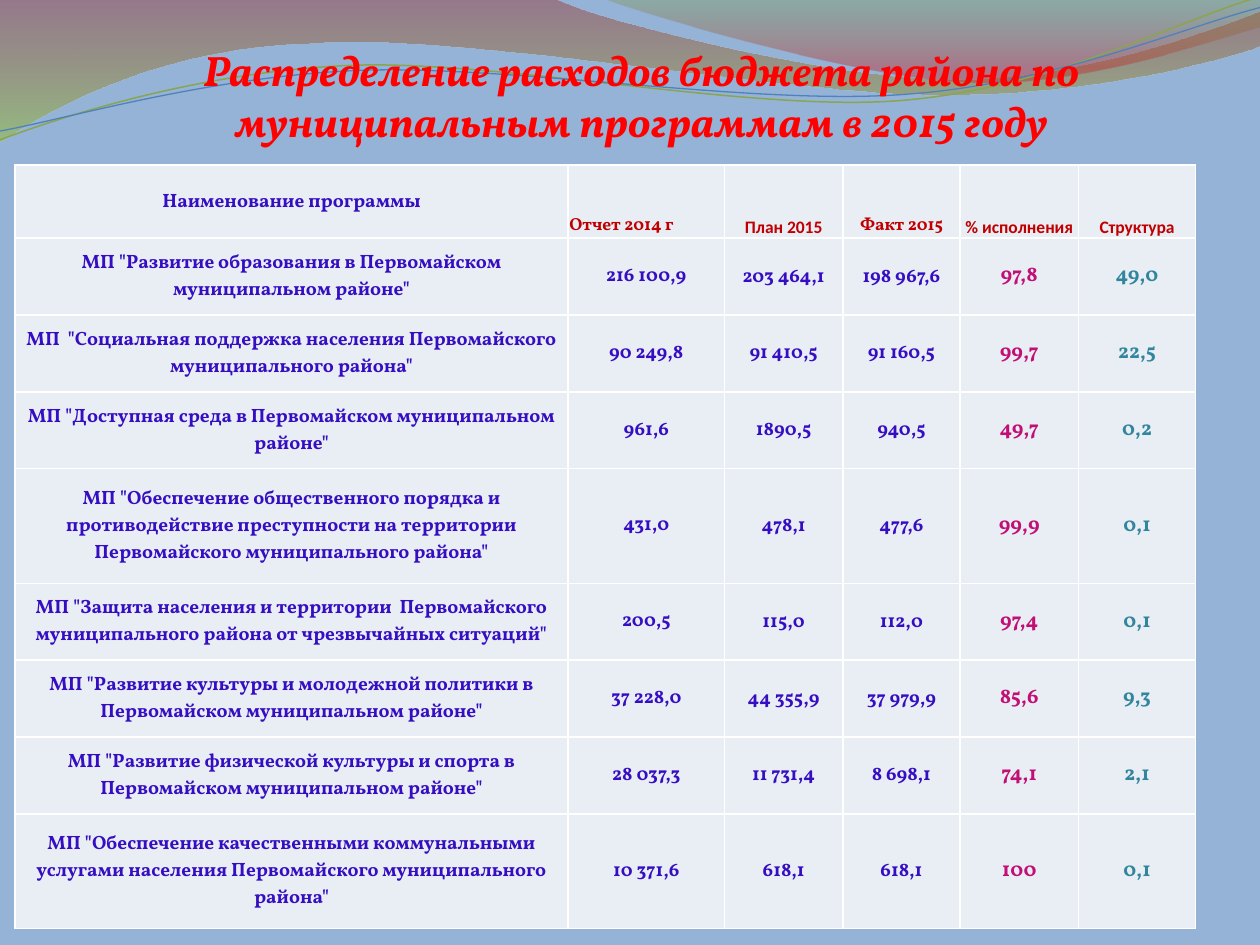
from lxml import etree
from pptx import Presentation
from pptx import util as u
from pptx.dml.color import RGBColor
from pptx.enum import text
from pptx.oxml import ns

SKY = RGBColor(0x95, 0xB3, 0xD7)
RED = RGBColor(0xFF, 0x00, 0x00)
DARK_RED = RGBColor(0xC0, 0x00, 0x00)
INDIGO = RGBColor(0x35, 0x0E, 0xC2)
MAGENTA = RGBColor(0xC1, 0x0F, 0x75)
TEAL = RGBColor(0x31, 0x85, 0x9C)
CELL = RGBColor(0xE9, 0xED, 0xF4)
WHITE = RGBColor(0xFF, 0xFF, 0xFF)
BRICK = RGBColor(0x97, 0x33, 0x30)
LIME = RGBColor(0x95, 0xC2, 0x38)
OLIVE = RGBColor(0x76, 0x95, 0x37)
CRIMSON = RGBColor(0xBE, 0x33, 0x30)
GREEN = RGBColor(0x89, 0xA5, 0x4F)
BLUE = RGBColor(0x4F, 0x81, 0xBD)


def add_curve(slide, start, segments, close):
    """Draw a path of straight (2 numbers) and Bezier (6 numbers) segments."""
    builder = slide.shapes.build_freeform(u.Inches(start[0]), u.Inches(start[1]))
    ends = [(u.Inches(segment[-2]), u.Inches(segment[-1])) for segment in segments]
    builder.add_line_segments(ends, close=close)
    shape = builder.convert_to_shape()
    shape.shadow.inherit = False
    # Turn the lines that have control points into Bezier curves
    lines = list(shape._element.iter(ns.qn("a:lnTo")))
    for line, segment in zip(lines, segments):
        if len(segment) == 6:
            curve = etree.Element(ns.qn("a:cubicBezTo"))
            for x, y in zip(segment[::2], segment[1::2]):
                etree.SubElement(curve, ns.qn("a:pt"), x=str(u.Inches(x) - shape.left),
                                 y=str(u.Inches(y) - shape.top))
            line.getparent().replace(line, curve)
    return shape


def format_text(frame, size, color, font, align):
    paragraph = frame.paragraphs[0]
    paragraph.alignment = align
    run_font = paragraph.runs[0].font
    run_font.size = u.Pt(size)
    run_font.name = font
    run_font.bold = True
    run_font.color.rgb = color
    return paragraph


presentation = Presentation()
presentation.slide_width = u.Inches(10)
presentation.slide_height = u.Inches(7.5)
slide = presentation.slides.add_slide(presentation.slide_layouts[6])
slide.background.fill.solid()
slide.background.fill.fore_color.rgb = SKY

# Translucent waves: start, segments, gradient stops (position, colour, opacity %)
waves = [
    ((0, 0),
     [(4.4, -0.01), (4.76, 0.17, 6.64, 0.63, 7.58, 0.63),
      (8.53, 0.63, 9.58, 0.26, 10, 0.09), (10.01, 0.36),
      (9.83, 0.44, 8.7, 0.76, 7.46, 0.75), (6.22, 0.75, 3.82, 0.28, 2.57, 0.34),
      (1.29, 0.36, 0.46, 0.83, -0.01, 1.13), (0, 0)],
     [(0, BRICK, 45), (1, LIME, 55)]),
    ((4.79, -0.01),
     [(5.09, 0.11, 6.82, 0.62, 7.69, 0.65), (8.56, 0.69, 9.61, 0.32, 10, 0.21),
      (10, 0), (4.79, -0.01)],
     [(0, OLIVE, 30), (0.8, CRIMSON, 45)]),
]
for start, segments, stops in waves:
    wave = add_curve(slide, start, segments, True)
    wave.line.fill.background()
    wave.fill.gradient()
    wave.fill.gradient_angle = 270
    for stop, (position, color, _) in zip(wave.fill.gradient_stops, stops):
        stop.position = position
        stop.color.rgb = color
    for element, (_, _, opacity) in zip(wave._element.spPr.iter(ns.qn("a:srgbClr")), stops):
        etree.SubElement(element, ns.qn("a:alpha"), val=str(opacity * 1000))

# Thin wave lines
wave_lines = [
    ((0, 1.11), [(0.48, 0.93, 1.58, 0.57, 2.77, 0.52), (3.95, 0.47, 5.93, 0.89, 7.13, 0.8),
                 (8.33, 0.71, 9.38, 0.15, 9.98, -0.02)], GREEN, 0.85),
    ((0, 1.04), [(0.47, 0.96, 1.64, 0.61, 2.83, 0.56), (4.03, 0.51, 5.97, 0.84, 7.17, 0.75),
                 (8.36, 0.67, 9.41, 0.21, 10, 0.06)], BLUE, 0.75),
]
for start, segments, color, width in wave_lines:
    wave_line = add_curve(slide, start, segments, False)
    wave_line.fill.background()
    wave_line.line.color.rgb = color
    wave_line.line.width = u.Pt(width)

# Title
title = slide.shapes.add_textbox(u.Inches(0.59), u.Inches(0.29), u.Inches(9), u.Inches(0.87))
frame = title.text_frame
frame.word_wrap = True
frame.vertical_anchor = text.MSO_ANCHOR.BOTTOM
frame.margin_left = frame.margin_right = frame.margin_bottom = 0
frame.margin_top = u.Inches(0.05)
frame.text = "Распределение расходов бюджета района по муниципальным программам в 2015 году"
paragraph = format_text(frame, 24.3, RED, "Vollkorn", text.PP_ALIGN.CENTER)
paragraph.runs[0].font.italic = True

# Programme table
rows = [
    ("Наименование программы", "Отчет 2014 г", "План 2015", "Факт 2015",
     "% исполнения", "Структура"),
    ('МП "Развитие образования в Первомайском муниципальном районе"',
     "216 100,9", "203 464,1", "198 967,6", "97,8", "49,0"),
    ('МП  "Социальная поддержка населения Первомайского муниципального района"',
     "90 249,8", "91 410,5", "91 160,5", "99,7", "22,5"),
    ('МП "Доступная среда в Первомайском муниципальном районе"',
     "961,6", "1890,5", "940,5", "49,7", "0,2"),
    ('МП "Обеспечение общественного порядка и противодействие преступности '
     'на территории Первомайского муниципального района"',
     "431,0", "478,1", "477,6", "99,9", "0,1"),
    ('МП "Защита населения и территории  Первомайского муниципального района '
     'от чрезвычайных ситуаций"',
     "200,5", "115,0", "112,0", "97,4", "0,1"),
    ('МП "Развитие культуры и молодежной политики в Первомайском муниципальном районе"',
     "37 228,0", "44 355,9", "37 979,9", "85,6", "9,3"),
    ('МП "Развитие физической культуры и спорта в Первомайском муниципальном районе"',
     "28 037,3", "11 731,4", "8 698,1", "74,1", "2,1"),
    ('МП "Обеспечение качественными коммунальными услугами населения '
     'Первомайского муниципального района"',
     "10 371,6", "618,1", "618,1", "100", "0,1"),
]
column_widths = [4.39, 1.24] + [0.94, 0.93] * 2
row_heights = [0.58] + [0.61] * 3 + [0.91] + [0.61] * 3 + [0.91]
header_fonts = ["Vollkorn", "Vollkorn", "Calibri", "Vollkorn", "Calibri", "Calibri"]
column_styles = [(11, INDIGO)] * 4 + [(12, MAGENTA), (12, TEAL)]

table = slide.shapes.add_table(len(rows), len(column_widths), u.Inches(0.12), u.Inches(1.31),
                               u.Inches(sum(column_widths)), u.Inches(sum(row_heights))).table
table.first_row = table.horz_banding = False
for column, width in zip(table.columns, column_widths):
    column.width = u.Inches(width)
for row, height in zip(table.rows, row_heights):
    row.height = u.Inches(height)

for row_index, values in enumerate(rows):
    for column_index, value in enumerate(values):
        cell = table.cell(row_index, column_index)
        is_header = row_index == 0
        is_label = is_header and column_index > 0
        cell.text_frame.text = value
        size, color = (10, DARK_RED) if is_label else column_styles[column_index]
        font = header_fonts[column_index] if is_header else "Vollkorn"
        align = text.PP_ALIGN.LEFT if is_label and column_index == 1 else text.PP_ALIGN.CENTER
        format_text(cell.text_frame, size, color, font, align)
        cell.vertical_anchor = text.MSO_ANCHOR.BOTTOM if is_label else text.MSO_ANCHOR.MIDDLE
        inset = 0.01 if is_header or column_index in (0, 2, 3) else 0
        cell.margin_left = cell.margin_right = cell.margin_top = u.Inches(inset)
        cell.margin_bottom = 0
        cell.fill.solid()
        cell.fill.fore_color.rgb = CELL
        # White borders go ahead of the fill
        properties = cell._tc.get_or_add_tcPr()
        for position, side in enumerate(("a:lnL", "a:lnR", "a:lnT", "a:lnB")):
            border = etree.Element(ns.qn(side), w=str(u.Pt(1)))
            border_fill = etree.SubElement(border, ns.qn("a:solidFill"))
            etree.SubElement(border_fill, ns.qn("a:srgbClr"), val=str(WHITE))
            properties.insert(position, border)

presentation.save("out.pptx")
